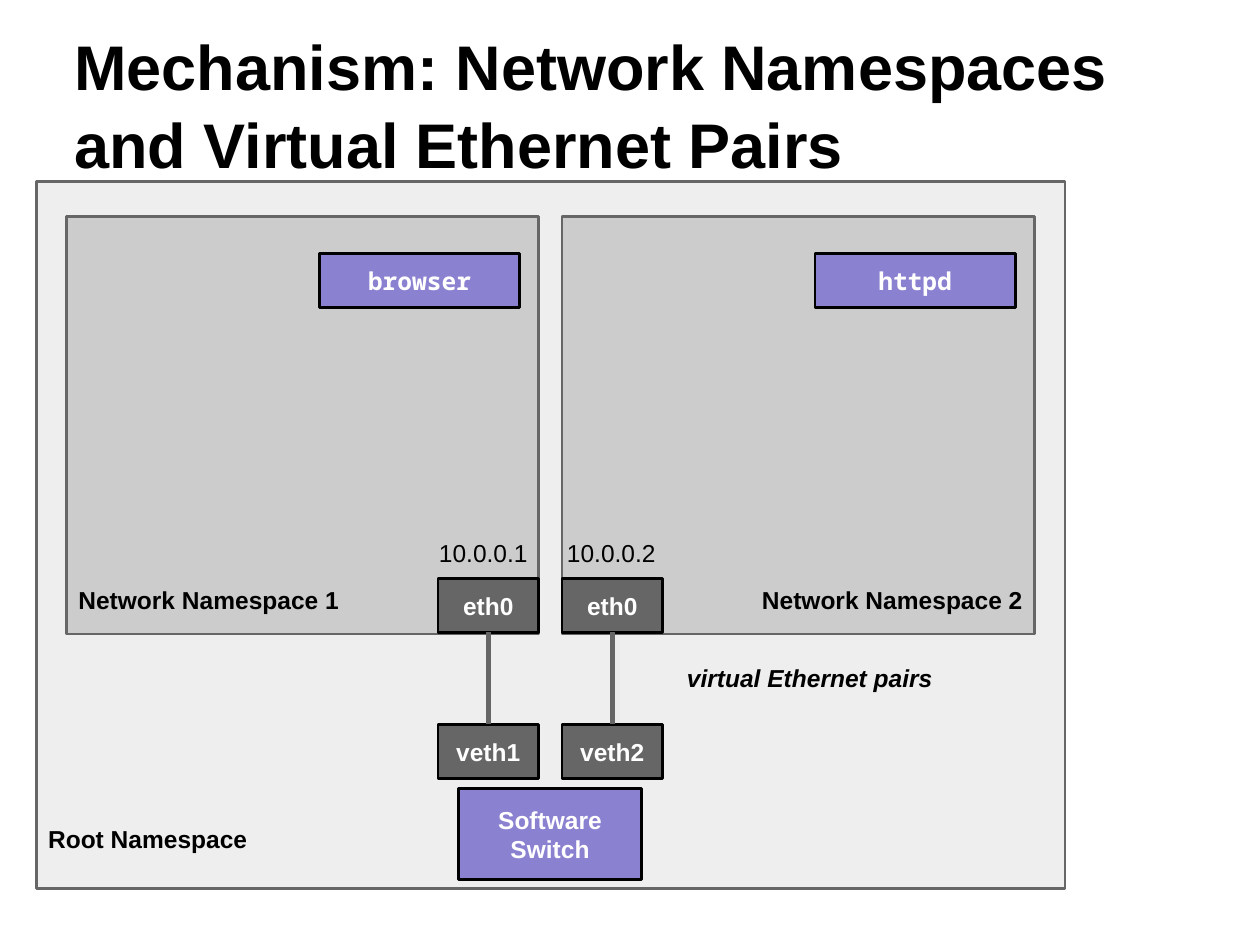
from dataclasses import dataclass

from lxml.etree import SubElement
from pptx import Presentation
from pptx.dml.color import RGBColor as Rgb
from pptx.enum.shapes import MSO_CONNECTOR as Connector, MSO_SHAPE as Preset
from pptx.enum.text import MSO_ANCHOR as Anchor, MSO_AUTO_SIZE as AutoSize, PP_ALIGN as Align
from pptx.oxml.ns import qn
from pptx.util import Cm, Pt


@dataclass(frozen=True)
class Theme:
    ink: Rgb = Rgb(0x00, 0x00, 0x00)
    paper: Rgb = Rgb(0xFF, 0xFF, 0xFF)
    root: Rgb = Rgb(0xEE, 0xEE, 0xEE)
    namespace: Rgb = Rgb(0xCC, 0xCC, 0xCC)
    device: Rgb = Rgb(0x66, 0x66, 0x66)
    software: Rgb = Rgb(0x8B, 0x81, 0xD1)
    sans: str = "Arial"
    mono: str = "Noto Sans Mono"
    title_size: Pt = Pt(36)
    body_size: Pt = Pt(14)
    outline: Pt = Pt(1.5)
    link: Pt = Pt(3)


@dataclass(frozen=True)
class Area:
    """A rectangle on the slide, in centimetres."""
    left: float
    top: float
    width: float
    height: float

    def lengths(self) -> tuple:
        return Cm(self.left), Cm(self.top), Cm(self.width), Cm(self.height)


@dataclass(frozen=True)
class Namespace:
    number: int
    process: str
    left: float
    device_left: float
    address_left: float
    label_left: float


THEME = Theme()
ROOT = Area(0.74, 3.66, 20.73, 14.25)
NAMESPACE_TOP, NAMESPACE_WIDTH, NAMESPACE_HEIGHT = 4.37, 9.52, 8.41
DEVICE_WIDTH, BOX_HEIGHT = 2.03, 1.09
ETH_TOP, VETH_TOP = 11.66, 14.6
LABEL_HEIGHT = 0.66
NAMESPACES = [
    Namespace(1, "browser", 1.34, 8.83, 8.85, 1.58),
    Namespace(2, "httpd", 11.33, 11.33, 11.43, 15.36),
]


def write(frame, text: str, align=Align.LEFT, anchor=Anchor.TOP, spacing=1.0, **font_format) -> None:
    frame_format = dict(margin_left=0, margin_right=0, margin_top=0, margin_bottom=0,
                        word_wrap=True, auto_size=AutoSize.NONE, vertical_anchor=anchor)
    for name, value in frame_format.items():
        setattr(frame, name, value)
    frame.text = text
    paragraph = frame.paragraphs[0]
    paragraph.alignment = align
    paragraph.line_spacing = spacing
    color = font_format.pop("color", THEME.ink)
    defaults = dict(name=THEME.sans, size=THEME.body_size, bold=True)
    for run in paragraph.runs:
        for name, value in (defaults | font_format).items():
            setattr(run.font, name, value)
        run.font.color.rgb = color


def add_box(slide, area: Area, fill: Rgb, line: Rgb, text: str = "", font: str = THEME.sans) -> None:
    box = slide.shapes.add_shape(Preset.RECTANGLE, *area.lengths())
    box.shadow.inherit = False
    box.fill.solid()
    box.fill.fore_color.rgb = fill
    box.line.color.rgb = line
    box.line.width = THEME.outline
    if text:
        write(box.text_frame, text, Align.CENTER, Anchor.MIDDLE, name=font, color=THEME.paper)


def add_label(slide, text: str, left: float, top: float, width: float, **font_format) -> None:
    label = slide.shapes.add_textbox(*Area(left, top, width, LABEL_HEIGHT).lengths())
    write(label.text_frame, text, anchor=Anchor.MIDDLE, **font_format)


def add_link(slide, x: float, top: float, bottom: float) -> None:
    link = slide.shapes.add_connector(Connector.STRAIGHT, Cm(x), Cm(top), Cm(x), Cm(bottom))
    link.line.color.rgb = THEME.device
    link.line.width = THEME.link
    SubElement(link._element.spPr, qn("a:effectLst"))


def add_namespace(slide, ns: Namespace) -> None:
    """Draw one namespace with its process and its virtual Ethernet pair."""
    add_box(slide, Area(ns.left, NAMESPACE_TOP, NAMESPACE_WIDTH, NAMESPACE_HEIGHT),
            THEME.namespace, THEME.device)
    add_box(slide, Area(ns.left + 5.1, 5.11, 4.04, BOX_HEIGHT),
            THEME.software, THEME.ink, ns.process, THEME.mono)
    for device, top in (("eth0", ETH_TOP), (f"veth{ns.number}", VETH_TOP)):
        add_box(slide, Area(ns.device_left, top, DEVICE_WIDTH, BOX_HEIGHT),
                THEME.device, THEME.ink, device)
    add_link(slide, ns.device_left + DEVICE_WIDTH / 2, ETH_TOP + BOX_HEIGHT, VETH_TOP)
    add_label(slide, f"Network Namespace {ns.number}", ns.label_left, 11.75, 5.5)
    add_label(slide, f"10.0.0.{ns.number}", ns.address_left, 10.81, 2.2, bold=False)


def main() -> None:
    deck = Presentation()
    deck.slide_width, deck.slide_height = Cm(25.4), Cm(19.05)
    slide = deck.slides.add_slide(deck.slide_layouts[5])

    title = slide.shapes.title
    title.left, title.top, title.width, title.height = Area(1.5, 0.53, 22.45, 3.12).lengths()
    write(title.text_frame, "Mechanism: Network Namespaces and Virtual Ethernet Pairs",
          anchor=Anchor.BOTTOM, spacing=1.03, size=THEME.title_size)

    add_box(slide, ROOT, THEME.root, THEME.device)
    add_label(slide, "Root Namespace", 0.97, 16.58, 4.3)
    for namespace in NAMESPACES:
        add_namespace(slide, namespace)
    add_box(slide, Area(9.25, 15.9, 3.68, 1.83), THEME.software, THEME.ink, "Software\vSwitch")
    add_label(slide, "virtual Ethernet pairs", 13.85, 13.33, 5.3, italic=True)
    deck.save("out.pptx")


if __name__ == "__main__":
    main()
